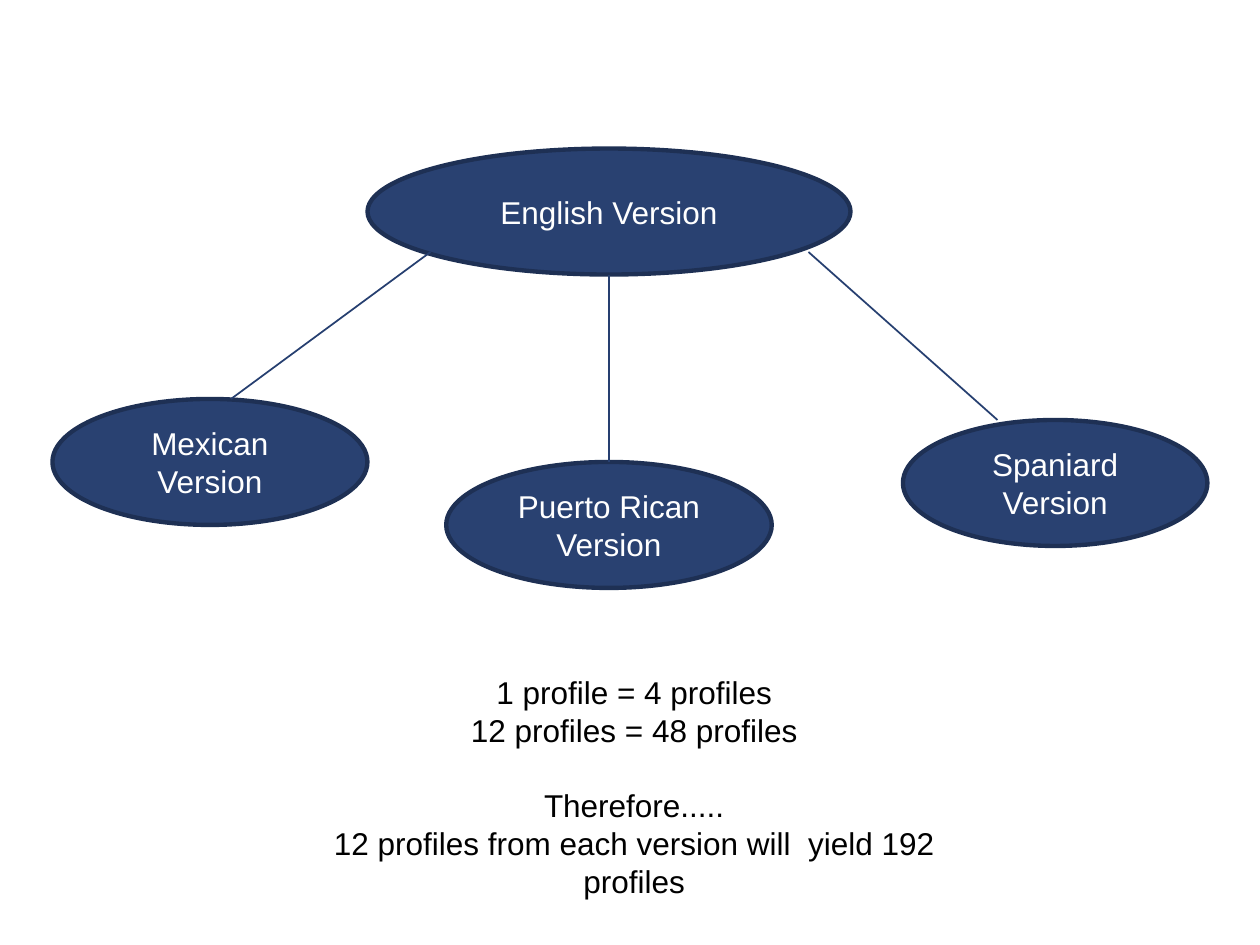
from pptx import Presentation, util as u
from pptx.dml.color import RGBColor
from pptx.enum import shapes, text
from lxml import etree

NAVY = RGBColor(0x29, 0x41, 0x71)
EDGE = RGBColor(0x1E, 0x30, 0x54)
LINK = RGBColor(0x26, 0x3F, 0x70)
WHITE = RGBColor(255, 255, 255)
BLACK = RGBColor(0, 0, 0)
NS = "http://schemas.openxmlformats.org/drawingml/2006/main"

deck = Presentation()
deck.slide_width, deck.slide_height = u.Inches(10), u.Inches(7.5)
slide = deck.slides.add_slide(deck.slide_layouts[6])
COL = deck.slide_width / 120
ROW = deck.slide_height / 90


def place(*spots):
    return [round(n * (ROW if i % 2 else COL)) for i, n in enumerate(spots)]


def style(para, line, color):
    para.text = line
    para.alignment = text.PP_ALIGN.CENTER
    para.font.name = "Arial"
    para.font.size = u.Pt(18)
    para.font.color.rgb = color


ovals = [
    ("English Version", 35, 14.15, 46),
    ("Mexican Version", 5, 38, 30),
    ("Puerto Rican Version", 42.5, 44, 31),
    ("Spaniard Version", 86, 40, 29),
]
for label, left, top, width in ovals:
    oval = slide.shapes.add_shape(shapes.MSO_SHAPE.OVAL, *place(left, top, width, 12))
    oval.shadow.inherit = False
    oval.fill.solid()
    oval.fill.fore_color.rgb = NAVY
    oval.line.color.rgb = EDGE
    oval.line.width = u.Pt(2.5)
    oval.text_frame.word_wrap = True
    oval.text_frame.vertical_anchor = text.MSO_ANCHOR.MIDDLE
    style(oval.text_frame.paragraphs[0], label, WHITE)

for ends in [(41, 24, 22, 38), (58, 26.15, 58, 44), (77, 24, 95, 40)]:
    link = slide.shapes.add_connector(shapes.MSO_CONNECTOR.STRAIGHT, *place(*ends))
    link.line.color.rgb = LINK
    link.line.width = u.Pt(1)
    etree.SubElement(link._element.spPr, f"{{{NS}}}effectLst")

box = slide.shapes.add_textbox(*place(25.9, 63.5, 69, 19.5))
frame = box.text_frame
frame.word_wrap = True
frame.auto_size = text.MSO_AUTO_SIZE.SHAPE_TO_FIT_TEXT
sums = [
    ("1 profile = 4 profiles", 0),
    ("12 profiles = 48 profiles", 0),
    ("Therefore.....", 21.6),
    ("12 profiles from each version will  yield 192 profiles", 0),
]
for i, (line, gap) in enumerate(sums):
    para = frame.add_paragraph() if i else frame.paragraphs[0]
    style(para, line, BLACK)
    if gap:
        para.space_before = u.Pt(gap)

deck.save("out.pptx")
